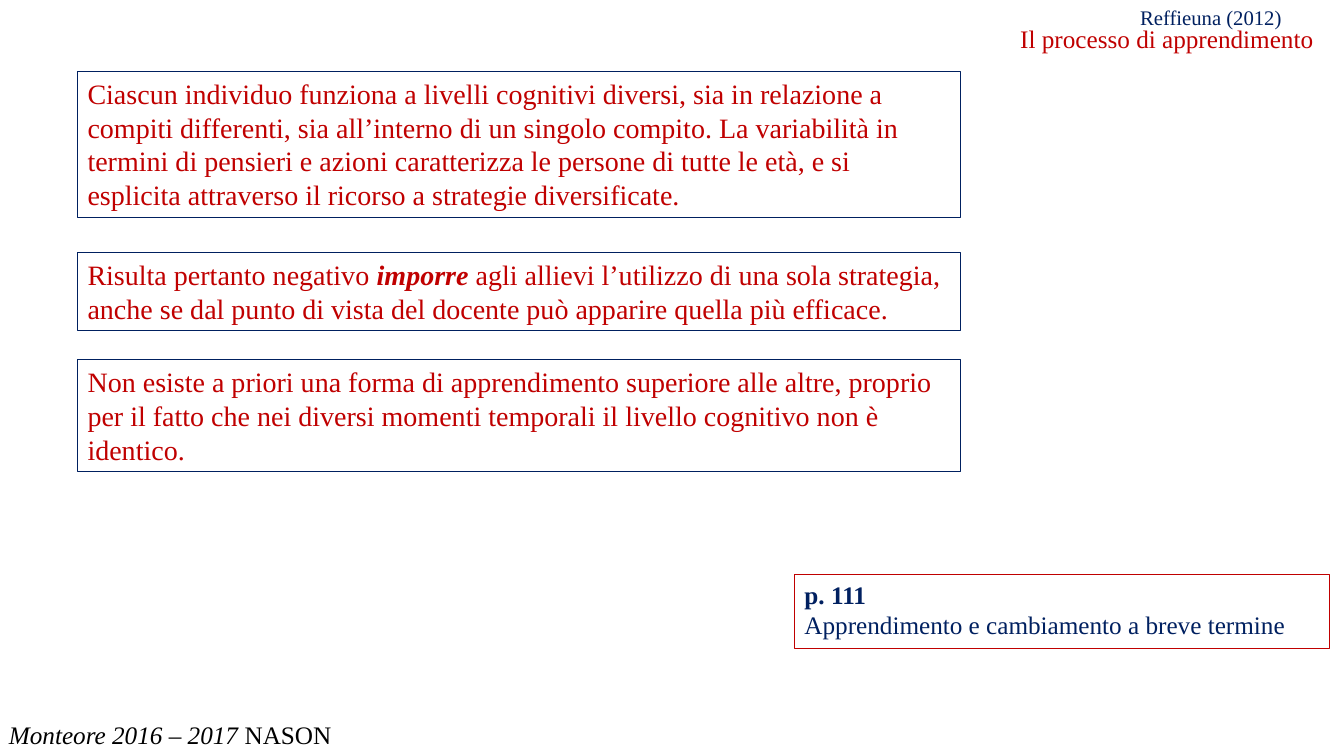
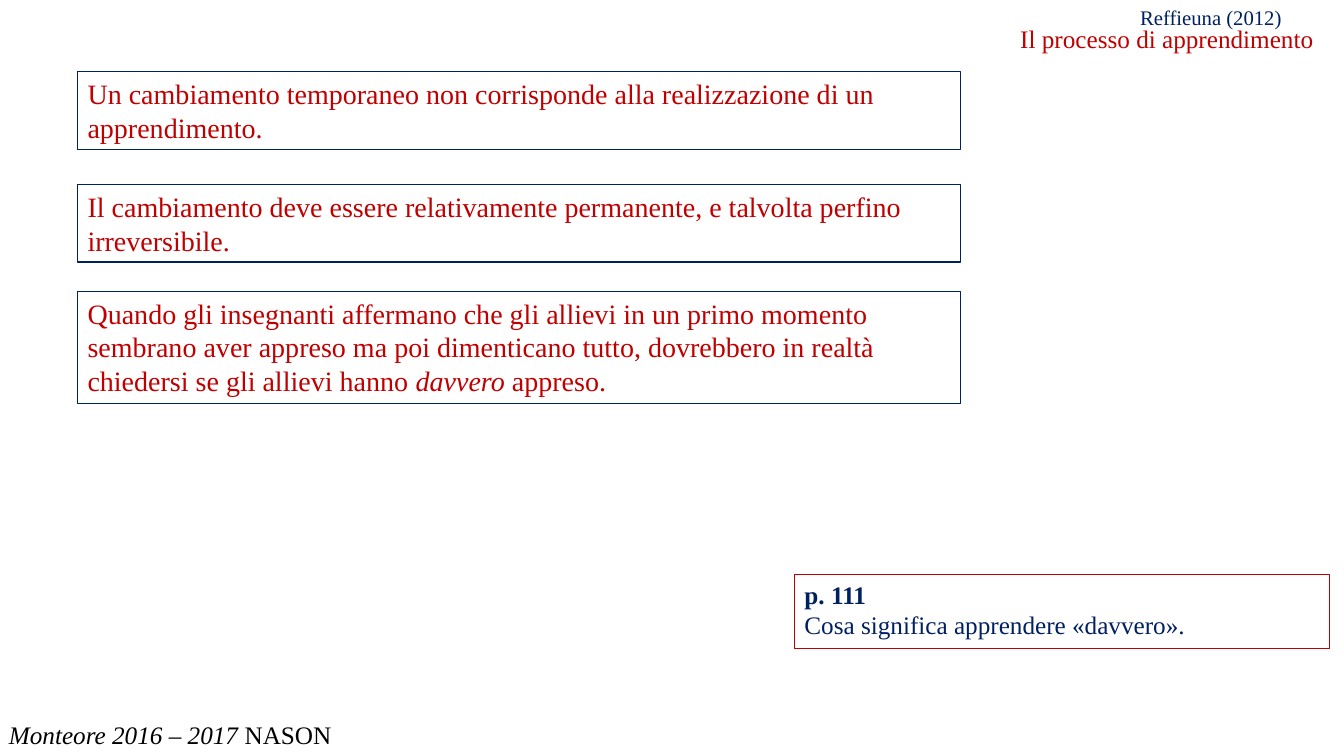
"""Builds two slides on the learning process."""
import pptx
import pptx.dml.color
import pptx.util

Inches, Pt = pptx.util.Inches, pptx.util.Pt

NAVY, RED, BLACK = "002060", "C00000", "000000"
FACE = "Times New Roman"
BOLD, ITALIC = {"bold": True}, {"italic": True}

HEADS = [
    ((11.21, 0.05, 2.24, 0.31), "Reffieuna (2012)", 14.8, NAVY,
     {"line_spacing": 0.8, "space_before": Pt(10)}),
    ((10.02, 0.22, 3.31, 0.37), "Il processo di apprendimento", 18, RED,
     {"line_spacing": 0.9, "space_before": Pt(10)}),
]
FOOT = [[("Monteore 2016 – 2017 ", ITALIC), ("NASON", {})]]
PAGE = "p. 111"

SLIDES = [
    {
        "boxes": [
            (4, [("Ciascun individuo funziona a livelli cognitivi diversi, sia in "
                  "relazione a compiti differenti, sia all’interno di un singolo "
                  "compito. La variabilità in termini di pensieri e azioni "
                  "caratterizza le persone di tutte le età, e si esplicita "
                  "attraverso il ricorso a strategie diversificate.", {})]),
            (2, [("Risulta pertanto negativo ", {}),
                 ("imporre", {**BOLD, **ITALIC}),
                 (" agli allievi l’utilizzo di una sola strategia, anche se dal "
                  "punto di vista del docente può apparire quella più efficace.", {})]),
            (3, [("Non esiste a priori una forma di apprendimento superiore alle "
                  "altre, proprio per il fatto che nei diversi momenti temporali "
                  "il livello cognitivo non è identico.", {})]),
        ],
        "note": "Apprendimento e cambiamento a breve termine",
    },
    {
        "boxes": [
            (2, [("Un cambiamento temporaneo non corrisponde alla realizzazione "
                  "di un apprendimento.", {})]),
            (2, [("Il cambiamento deve essere relativamente permanente, e talvolta "
                  "perfino irreversibile.", {})]),
            (3, [("Quando gli insegnanti affermano che gli allievi in un primo "
                  "momento sembrano aver appreso ma poi dimenticano tutto, "
                  "dovrebbero in realtà chiedersi se gli allievi hanno ", {}),
                 ("davvero ", ITALIC), ("appreso.", {})]),
        ],
        "note": "Cosa significa apprendere «davvero».",
    },
]

LEFT, WIDE, TOP = 0.77, 8.76, 0.71
GAPS = (0.35, 0.29, 0)
ROW, PAD = 0.34, 0.09


def color(code):
    """Turn a hex string into a colour."""
    return pptx.dml.color.RGBColor.from_string(code)


def apply(target, values):
    """Set each named value on the target."""
    for name, value in values.items():
        setattr(target, name, value)


def write(slide, place, paras, size, ink, edge=None, form=None):
    """Add a text box, framed if an edge colour is given."""
    box = slide.shapes.add_textbox(*map(Inches, place))
    if edge:
        box.line.color.rgb = color(edge)
        box.line.width = Pt(0.75)
    frame = box.text_frame
    frame.word_wrap = True
    for index, runs in enumerate(paras):
        para = frame.add_paragraph() if index else frame.paragraphs[0]
        apply(para, form or {})
        for text, style in runs:
            run = para.add_run()
            run.text = text
            apply(run.font, {"name": FACE, "size": Pt(size), **style})
            run.font.color.rgb = color(ink)


def build(deck, data):
    """Add one slide with its head, foot, boxes and note."""
    slide = deck.slides.add_slide(deck.slide_layouts[6])
    for place, text, size, ink, form in HEADS:
        write(slide, place, [[(text, {})]], size, ink, form=form)
    write(slide, (-0.01, 7.09, 3.63, 0.4), FOOT, 18, BLACK)
    top = TOP
    for (rows, runs), gap in zip(data["boxes"], GAPS):
        high = rows * ROW + PAD
        write(slide, (LEFT, top, WIDE, high), [runs], 20, RED, NAVY)
        top += high + gap
    note = [[(PAGE, BOLD)], [(data["note"], {})]]
    write(slide, (7.88, 5.7, 5.31, 0.73), note, 18, NAVY, RED)


def main():
    """Build and save the deck."""
    deck = pptx.Presentation()
    apply(deck, {"slide_width": Inches(13.33), "slide_height": Inches(7.5)})
    for data in SLIDES:
        build(deck, data)
    deck.save("out.pptx")


if __name__ == "__main__":
    main()
